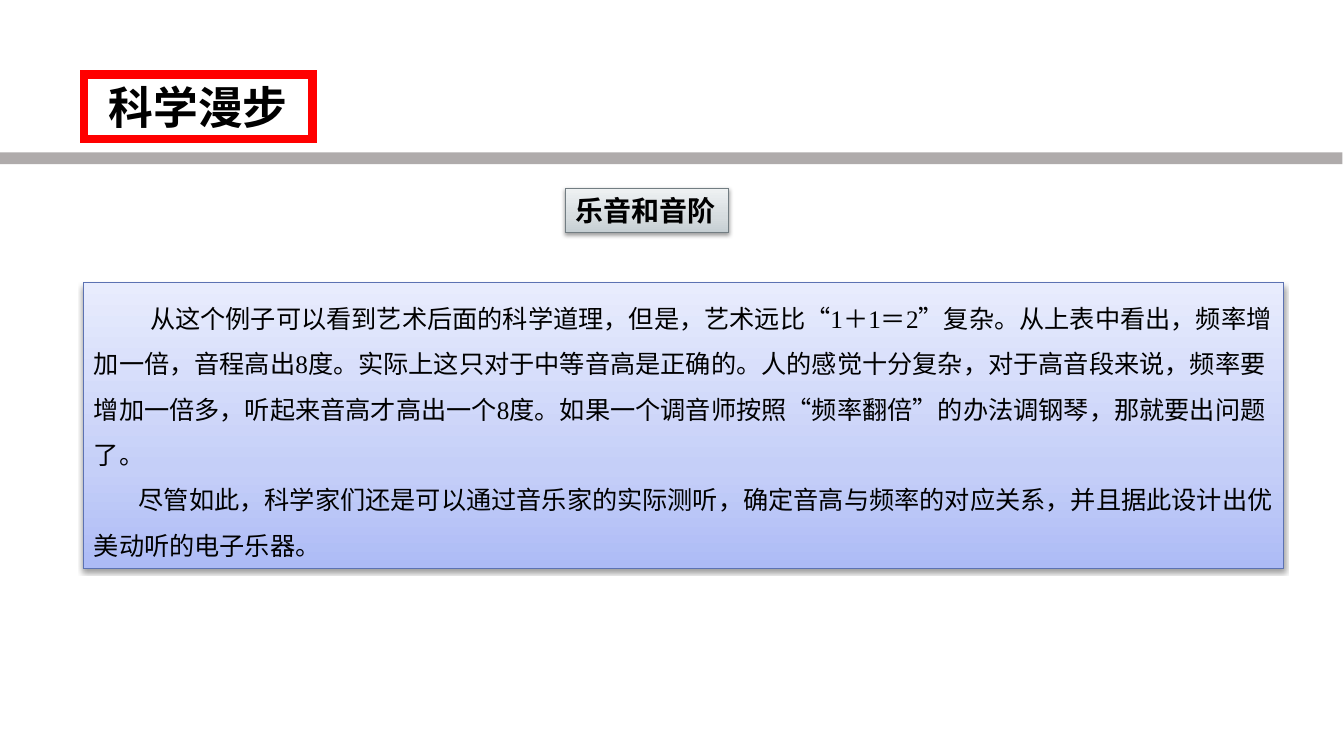
"""Builds the slide on musical tones and scales."""
from pptx import Presentation
from pptx.dml.color import RGBColor
from pptx.enum.shapes import MSO_SHAPE
from pptx.enum.text import MSO_ANCHOR, MSO_AUTO_SIZE, PP_ALIGN
from pptx.oxml import parse_xml
from pptx.oxml.ns import nsdecls, qn
from pptx.util import Cm, Pt

TITLE = "科学漫步"
LABEL = "乐音和音阶"
BODY = [
    ("从这个例子可以看到艺术后面的科学道理，但是，艺术远比“1＋1＝2”复杂。"
     "从上表中看出，频率增加一倍，音程高出8度。实际上这只对于中等音高是正确的。"
     "人的感觉十分复杂，对于高音段来说，频率要增加一倍多，听起来音高才高出一个8度。"
     "如果一个调音师按照“频率翻倍”的办法调钢琴，那就要出问题了。", Cm(1.42)),
    ("尽管如此，科学家们还是可以通过音乐家的实际测听，确定音高与频率的对应关系，"
     "并且据此设计出优美动听的电子乐器。", Cm(1.13)),
]
COLORS = {"text": "000000", "frame": "FF0000", "band": "AFABAB",
          "label line": "727D82", "body line": "5C72B2"}
LABEL_GRADIENT = [(0, "C5CED2"), (35, "D6DCDF"), (100, "EFF2F3")]
BODY_GRADIENT = [(0, "ADBBF6"), (35, "C5CFF8"), (100, "E8ECFD")]
CJK_FONT = "Noto Sans CJK SC"
LATIN_FONT = "Times New Roman"


def color(name):
    return RGBColor.from_string(COLORS[name])


def place(shape, left, top, width, height):
    shape.left, shape.top = Cm(left), Cm(top)
    shape.width, shape.height = Cm(width), Cm(height)


def outline(shape, name, width):
    shape.line.color.rgb = color(name)
    shape.line.width = Pt(width)
    shape._element.spPr.find(qn("a:ln")).append(
        parse_xml(f'<a:miter {nsdecls("a")} lim="800000"/>'))


def add_panel_style(shape, gradient, line_name):
    stops = "".join(
        f'<a:gs pos="{position * 1000}"><a:srgbClr val="{value}"/></a:gs>'
        for position, value in gradient)
    properties = shape._element.spPr
    properties.append(parse_xml(
        f'<a:gradFill {nsdecls("a")} rotWithShape="1"><a:gsLst>{stops}</a:gsLst>'
        '<a:lin ang="16200000" scaled="0"/></a:gradFill>'))
    outline(shape, line_name, 0.75)
    properties.append(parse_xml(
        f'<a:effectLst {nsdecls("a")}><a:outerShdw blurRad="{Pt(3.1)}" dist="{Pt(1.6)}" '
        'dir="5400000" rotWithShape="0"><a:srgbClr val="000000">'
        '<a:alpha val="38000"/></a:srgbClr></a:outerShdw></a:effectLst>'))


def set_frame(shape, anchor):
    frame = shape.text_frame
    frame.word_wrap = True
    frame.auto_size = MSO_AUTO_SIZE.NONE
    frame.vertical_anchor = anchor
    return frame


def add_text(paragraph, text, size, font_name, bold=False, align=PP_ALIGN.LEFT):
    paragraph.alignment = align
    paragraph.space_before = Pt(0)
    run = paragraph.add_run()
    run.text = text
    run.font.size = Pt(size)
    run.font.bold = bold
    run.font.name = font_name
    run.font.color.rgb = color("text")
    properties = run._r.get_or_add_rPr()
    properties.set("lang", "zh-CN")
    properties.find(qn("a:latin")).addnext(
        parse_xml(f'<a:ea {nsdecls("a")} typeface="{CJK_FONT}"/>'))


def main():
    presentation = Presentation()
    presentation.slide_width, presentation.slide_height = Cm(33.87), Cm(19.05)
    slide = presentation.slides.add_slide(presentation.slide_layouts[1])
    title, body = slide.placeholders

    band = slide.shapes.add_shape(MSO_SHAPE.RECTANGLE, Cm(0), Cm(3.84), Cm(33.83), Cm(0.3))
    band.shadow.inherit = False
    band.fill.solid()
    band.fill.fore_color.rgb = color("band")
    band.line.fill.background()

    place(title, 2.11, 1.88, 5.77, 1.63)
    outline(title, "frame", 6)
    title_frame = set_frame(title, MSO_ANCHOR.MIDDLE)
    add_text(title_frame.paragraphs[0], TITLE, 32, CJK_FONT, True, PP_ALIGN.CENTER)

    label = slide.shapes.add_shape(MSO_SHAPE.RECTANGLE, Cm(14.25), Cm(4.74), Cm(4.12), Cm(1.12))
    add_panel_style(label, LABEL_GRADIENT, "label line")
    label_frame = set_frame(label, MSO_ANCHOR.TOP)
    add_text(label_frame.paragraphs[0], LABEL, 20, CJK_FONT, True)

    place(body, 2.11, 7.13, 30.23, 7.19)
    add_panel_style(body, BODY_GRADIENT, "body line")
    body_frame = set_frame(body, MSO_ANCHOR.TOP)
    for index, (text, indent) in enumerate(BODY):
        paragraph = body_frame.add_paragraph() if index else body_frame.paragraphs[0]
        properties = paragraph._p.get_or_add_pPr()
        properties.set("marL", "0")
        properties.set("indent", str(indent))
        properties.append(parse_xml(f'<a:buNone {nsdecls("a")}/>'))
        paragraph.line_spacing = 1.5
        add_text(paragraph, text, 18, LATIN_FONT)

    presentation.save("out.pptx")


if __name__ == "__main__":
    main()
